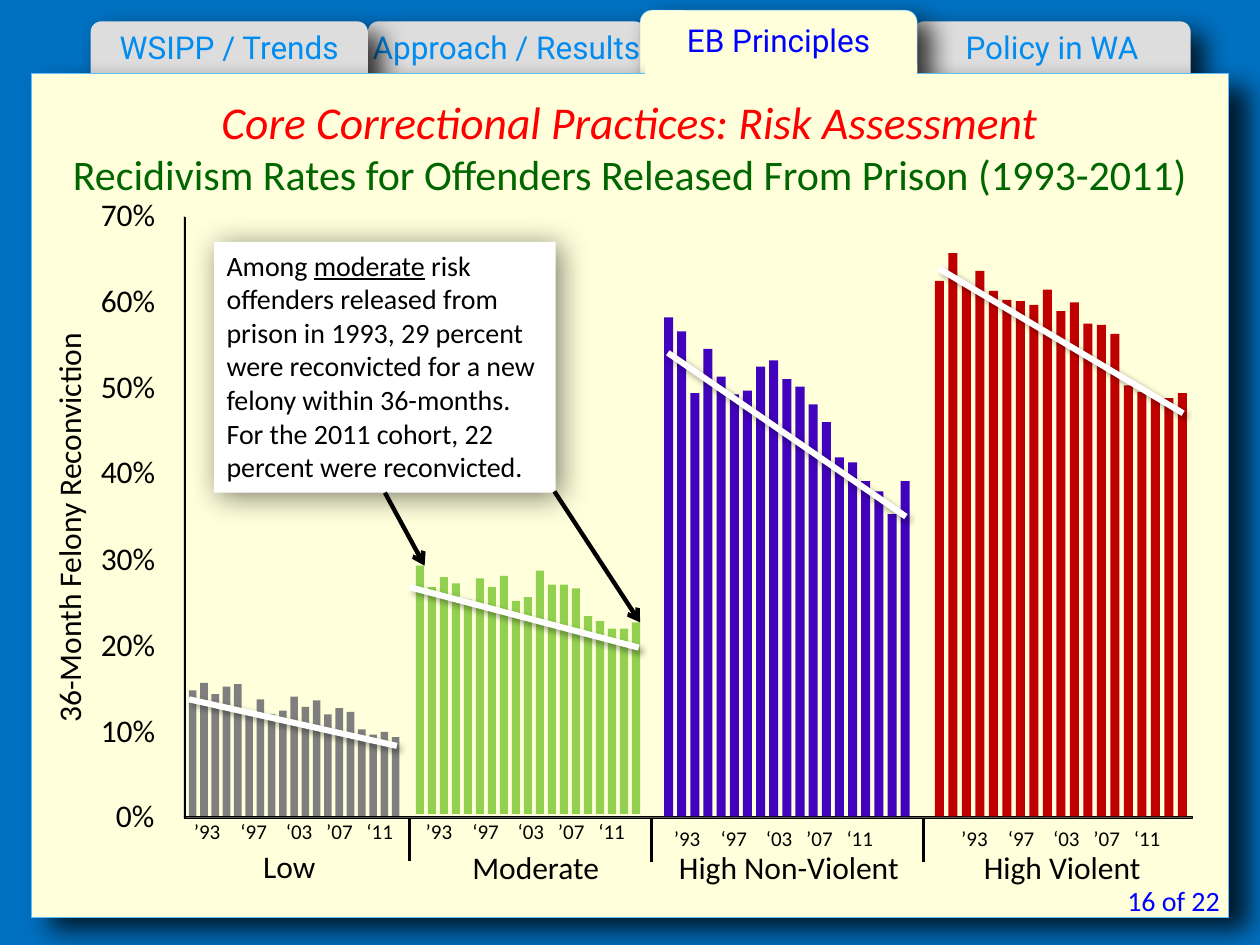
from lxml import etree
from pptx import Presentation
from pptx.dml.color import RGBColor
from pptx.enum.shapes import MSO_CONNECTOR, MSO_SHAPE
from pptx.enum.text import MSO_ANCHOR, MSO_AUTO_SIZE, PP_ALIGN
from pptx.oxml.ns import qn
from pptx.util import Pt

PX = 9144
RECT, ROUNDED = MSO_SHAPE.RECTANGLE, MSO_SHAPE.ROUNDED_RECTANGLE
STRAIGHT = MSO_CONNECTOR.STRAIGHT
LEFT, CENTER, RIGHT = PP_ALIGN.LEFT, PP_ALIGN.CENTER, PP_ALIGN.RIGHT
TOP, MIDDLE = MSO_ANCHOR.TOP, MSO_ANCHOR.MIDDLE
FIT_SHAPE = MSO_AUTO_SIZE.SHAPE_TO_FIT_TEXT

BLACK = RGBColor(0x00, 0x00, 0x00)
WHITE = RGBColor(0xFF, 0xFF, 0xFF)
BACKDROP = RGBColor(0x00, 0x70, 0xC0)
CREAM = RGBColor(0xFF, 0xFF, 0xDC)
TAB_GRAY = RGBColor(0xDD, 0xDD, 0xDD)
TAB_BLUE = RGBColor(0x00, 0x8C, 0xF0)
BLUE = RGBColor(0x00, 0x00, 0xFF)
EDGE_BLUE = RGBColor(0x60, 0xBD, 0xFF)
RED = RGBColor(0xFF, 0x00, 0x00)
GREEN = RGBColor(0x00, 0x66, 0x00)
LOW_GRAY = RGBColor(0x7F, 0x7F, 0x7F)
MODERATE_GREEN = RGBColor(0x92, 0xD0, 0x50)
NONVIOLENT_PURPLE = RGBColor(0x41, 0x03, 0xBD)
VIOLENT_RED = RGBColor(0xC0, 0x00, 0x00)

TAB_SHADOW = (79, 15, 10, 40)
PAGE_SHADOW = (79, 15, 14, 36)
TREND_SHADOW = (40, 4, 3, 45)
CALLOUT_SHADOW = (51, 17, 3, 45)
YEARS = ("’93", "‘97", "‘03", "’07", "‘11")
YEAR_STOPS = (37, 73, 105, 137)


class SlideBuilder:
    font = "Calibri"

    def __init__(self, slide):
        self.slide = slide
        self.shapes = slide.shapes

    def shadow(self, element, style):
        properties = element._element.spPr
        effects = properties.find(qn("a:effectLst"))
        if effects is None:
            effects = etree.SubElement(properties, qn("a:effectLst"))
        if style:
            alpha, blur, distance, angle = style
            outer = etree.SubElement(
                effects, qn("a:outerShdw"), blurRad=str(Pt(blur)),
                dist=str(Pt(distance)), dir=str(angle * 60000),
                algn="tl", rotWithShape="0")
            color = etree.SubElement(outer, qn("a:srgbClr"), val="000000")
            etree.SubElement(color, qn("a:alpha"), val=str(alpha * 1000))

    def paint(self, shape, fill, edge=None, edge_width=0, shadow=None):
        shape.fill.solid()
        shape.fill.fore_color.rgb = fill
        if edge is None:
            shape.line.fill.background()
        else:
            shape.line.color.rgb = edge
            shape.line.width = Pt(edge_width)
        shape.shadow.inherit = False
        self.shadow(shape, shadow)
        return shape

    def box(self, bounds, fill, kind=RECT, **style):
        shape = self.shapes.add_shape(kind, *(n * PX for n in bounds))
        return self.paint(shape, fill, **style)

    def fill_text(self, shape, paragraphs, align=LEFT, anchor=TOP, insets=None,
                  wrap=True, fit=True, font=None):
        frame = shape.text_frame
        frame.word_wrap = wrap
        frame.vertical_anchor = anchor
        if fit:
            frame.auto_size = FIT_SHAPE
        if insets:
            (frame.margin_left, frame.margin_top,
             frame.margin_right, frame.margin_bottom) = (n * PX for n in insets)
        for index, (text, size, color, italic) in enumerate(paragraphs):
            paragraph = frame.add_paragraph() if index else frame.paragraphs[0]
            for part, piece in enumerate(text.split("_")):
                run = paragraph.add_run()
                run.text = piece
                if part % 2:
                    run.font.underline = True
            paragraph.alignment = align
            paragraph.font.name = font or self.font
            paragraph.font.size = Pt(size)
            paragraph.font.color.rgb = color
            paragraph.font.italic = italic
        return shape

    def text(self, bounds, text, size=18, color=BLACK, **style):
        label = self.shapes.add_textbox(*(n * PX for n in bounds))
        return self.fill_text(label, [(text, size, color, False)], **style)

    def tab(self, bounds, title, fill, color, **edge):
        tab = self.box(bounds, fill, ROUNDED, shadow=TAB_SHADOW, **edge)
        self.fill_text(tab, [(title, 18, color, False)], CENTER, MIDDLE,
                       (0, 0, 0, 10), fit=False, font="Roboto")

    def line(self, start, end, color, width, shadow=None, arrow=False):
        line = self.shapes.add_connector(STRAIGHT, *(n * PX for n in start + end))
        line.line.color.rgb = color
        line.line.width = Pt(width)
        if arrow:
            etree.SubElement(line._element.spPr.find(qn("a:ln")),
                             qn("a:tailEnd"), type="arrow")
        self.shadow(line, shadow)
        return line

    def bars(self, left, right, width, base, tops, color):
        pitch = (right - width - left) / (len(tops) - 1)
        outline = None
        for index, top in enumerate(tops):
            x = left + index * pitch
            corners = [(round(a * PX), b * PX) for a, b in (
                (x, top), (x + width, top), (x + width, base), (x, base))]
            if outline is None:
                outline = self.shapes.build_freeform(*corners[0], scale=1.0)
            else:
                outline.move_to(*corners[0])
            outline.add_line_segments(corners[1:], close=True)
        self.paint(outline.convert_to_shape(), color)

    def years(self, left, top):
        label = self.text((left, top, 181, 30), "\t".join(YEARS), 12)
        properties = label.text_frame.paragraphs[0]._p.get_or_add_pPr()
        stops = etree.Element(qn("a:tabLst"))
        for stop in YEAR_STOPS:
            etree.SubElement(stops, qn("a:tab"), pos=str(stop * PX), algn="l")
        properties.insert(0, stops)


def main():
    deck = Presentation()
    deck.slide_width, deck.slide_height = 1000 * PX, 750 * PX
    page = SlideBuilder(deck.slides.add_slide(deck.slide_layouts[6]))
    page.slide.background.fill.solid()
    page.slide.background.fill.fore_color.rgb = BACKDROP

    for left, title in ((725, "Policy in WA"), (292, "Approach / Results"),
                        (72, "WSIPP / Trends")):
        page.tab((left, 17, 220, 50), title, TAB_GRAY, TAB_BLUE)
    page.tab((508, 8, 220, 58), "EB Principles", CREAM, BLUE,
             edge=EDGE_BLUE, edge_width=0.25)
    page.box((25, 58, 950, 670), CREAM, edge=EDGE_BLUE, edge_width=0.05,
             shadow=PAGE_SHADOW)
    heading = page.shapes.add_textbox(25 * PX, 58 * PX, 950 * PX, 117 * PX)
    page.fill_text(heading, [
        ("Core Correctional Practices: Risk Assessment", 26, RED, True),
        ("Recidivism Rates for Offenders Released From Prison (1993-2011)",
         24, GREEN, False)], CENTER, MIDDLE, fit=False)
    page.text((842, 696, 136, 37), "16 of 22", 16, BLUE, align=RIGHT)
    page.box((512, 50, 216, 11), CREAM)

    page.box((146, 172, 1, 477), BLACK, edge=BLACK, edge_width=0.13)
    for step in range(8):
        left = 80 if step else 92
        page.text((left, round(632 - step * 68.14), 136 - left, 37),
                  f"{step * 10}%", insets=(0, 0, 0, 0), wrap=False)
    page.text((-119, 390, 347, 40), "36-Month Felony Reconviction").rotation = 270

    page.bars(330, 508, 6.4, 646, (
        449, 466, 458, 463, 476, 459, 466, 457, 477, 474,
        453, 464, 464, 467, 489, 493, 499, 499, 494), MODERATE_GREEN)
    page.line((325, 466), (507, 514), WHITE, 3.5, TREND_SHADOW)

    callout = page.box((170, 192, 271, 199), WHITE, shadow=CALLOUT_SHADOW)
    page.fill_text(callout, [(
        "Among _moderate_ risk offenders released from prison in 1993, "
        "29 percent were reconvicted for a new felony within 36-months. "
        "For the 2011 cohort, 22 percent were reconvicted.", 16, BLACK, False)])
    first_cohort = page.line((306, 391), (337, 449), BLACK, 2.5, arrow=True)
    first_cohort.begin_connect(callout, 2)

    page.bars(150, 317, 6, 648, (
        548, 542, 551, 545, 543, 567, 555, 567, 564, 553,
        561, 556, 567, 562, 565, 579, 583, 581, 585), LOW_GRAY)
    page.line((150, 555), (315, 592), WHITE, 3.5, TREND_SHADOW)
    page.box((146, 648, 800, 1), BLACK, edge=BLACK, edge_width=0.13)

    for left, top, width, risk in (
            (365, 668, 123, "Moderate"), (529, 668, 246, "High Non-Violent"),
            (771, 668, 246, "High Violent"), (199, 667, 66, "Low")):
        page.text((left, top, width, 40), risk)
    for x, top in ((325, 649), (517, 650), (733, 650)):
        page.line((x, top), (x, top + 34), BLACK, 1.5)

    page.bars(527, 722, 7.2, 648, (
        252, 263, 312, 277, 299, 313, 310, 291, 286, 301,
        307, 321, 335, 363, 367, 382, 390, 408, 382), NONVIOLENT_PURPLE)
    page.line((530, 280), (719, 410), WHITE, 3.5, TREND_SHADOW)
    page.bars(742, 942, 7.2, 648, (
        223, 201, 227, 215, 231, 238, 239, 242, 230, 247,
        240, 257, 258, 265, 306, 311, 316, 316, 312), VIOLENT_RED)
    page.line((745, 213), (939, 328), WHITE, 3.5, TREND_SHADOW)
    for left, top in ((144, 645), (328, 645), (525, 650), (753, 650)):
        page.years(left, top)
    page.line((440, 390), (508, 494), BLACK, 2.5, arrow=True)

    deck.save("out.pptx")


if __name__ == "__main__":
    main()
